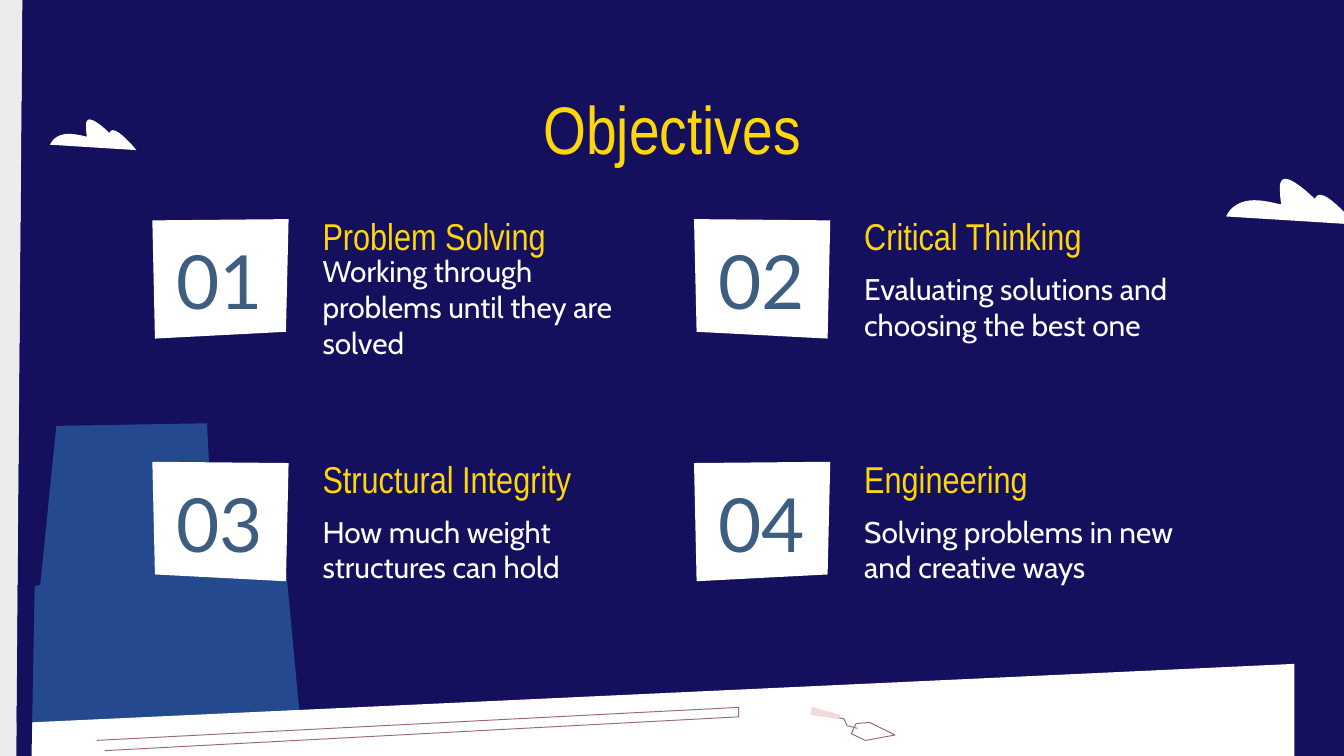
from dataclasses import dataclass

from pptx import Presentation
from pptx.dml.color import RGBColor
from pptx.enum.text import MSO_ANCHOR, MSO_AUTO_SIZE, PP_ALIGN
from pptx.util import Pt


@dataclass(frozen=True)
class Theme:
    navy: str = "14105E"
    blue: str = "25498F"
    white: str = "FFFFFF"
    paper: str = "ECECEC"
    yellow: str = "FED609"
    steel: str = "3E5E81"
    mauve: str = "9B6A70"
    pink: str = "F3D9DD"
    heading_font: str = "Arial Narrow"
    body_font: str = "Cabin"
    number_font: str = "Lato"
    title_size: int = 36
    number_size: int = 40
    heading_size: int = 20
    body_size: int = 16
    outline_width: float = 0.5


THEME = Theme()

OBJECTIVES = [
    ("01", "Problem Solving", "Working through problems until they are solved"),
    ("02", "Critical Thinking", "Evaluating solutions and choosing the best one"),
    ("03", "Structural Integrity", "How much weight structures can hold"),
    ("04", "Engineering", "Solving problems in new and creative ways"),
]
GRID_LEFT, GRID_TOP = 81.6, 117.4
COLUMN_PITCH, ROW_PITCH = 290.2, 130
CARD_WIDTH = 73
CARD_OUTLINE = [(0, 0.7), (CARD_WIDTH, 0), (71.6, 60.4), (1.4, 64)]

CLOUD_START = (31.7, 0)
CLOUD_CURVES = [
    [(30.2, 0), (28.8, 1.4), (28.8, 4.3)],
    [(28.8, 10.8), (29.5, 13), (29.5, 13.7)],
    [(28.1, 13.7), (21.6, 11.5), (15.1, 11.5)],
    [(9.4, 11.5), (2.9, 13.7), (0, 20.2)],
    [(0, 20.2), (69.1, 24.5), (69.1, 24.5)],
    [(69.1, 24.5), (56.2, 8.6), (50.4, 8.6)],
    [(49, 8.6), (48.2, 9.4), (47.5, 10.8)],
    [(47.5, 10.8), (36.7, 0), (31.7, 0)],
]


def add_outline(slide, points, closed):
    corners = [(Pt(x), Pt(y)) for x, y in points]
    builder = slide.shapes.build_freeform(*corners[0])
    builder.add_line_segments(corners[1:], close=closed)
    shape = builder.convert_to_shape()
    shape.shadow.inherit = False
    return shape


def add_polygon(slide, points, color):
    shape = add_outline(slide, points, True)
    shape.fill.solid()
    shape.fill.fore_color.rgb = RGBColor.from_string(color)
    shape.line.fill.background()


def add_line_drawing(slide, points, closed=False):
    shape = add_outline(slide, points, closed)
    shape.fill.background()
    shape.line.color.rgb = RGBColor.from_string(THEME.mauve)
    shape.line.width = Pt(THEME.outline_width)


def curve_points(start, curve, steps=10):
    controls = [start, *curve]
    for step in range(1, steps + 1):
        t = step / steps
        weights = [(1 - t) ** 3, 3 * t * (1 - t) ** 2, 3 * t**2 * (1 - t), t**3]
        yield tuple(
            sum(weight * point[axis] for weight, point in zip(weights, controls))
            for axis in (0, 1)
        )


def add_cloud(slide, left, top, scale):
    points = [CLOUD_START]
    for curve in CLOUD_CURVES:
        points.extend(curve_points(points[-1], curve))
    add_polygon(slide, [(left + scale * x, top + scale * y) for x, y in points], THEME.white)


def write_text(shape, text, font, size, color, alignment, anchor):
    frame = shape.text_frame
    frame.word_wrap = True
    frame.auto_size = MSO_AUTO_SIZE.NONE
    frame.vertical_anchor = anchor
    frame.margin_left = frame.margin_right = frame.margin_top = frame.margin_bottom = 0
    paragraph = frame.paragraphs[0]
    paragraph.alignment = alignment
    run = paragraph.add_run()
    run.text = text
    run.font.name = font
    run.font.size = Pt(size)
    run.font.color.rgb = RGBColor.from_string(color)


def add_label(slide, box, text, font, size, color, alignment=PP_ALIGN.LEFT):
    shape = slide.shapes.add_textbox(*map(Pt, box))
    write_text(shape, text, font, size, color, alignment, MSO_ANCHOR.MIDDLE)


def add_title(slide, text):
    title = slide.shapes.title
    title.left, title.top, title.width, title.height = map(Pt, (59, 46.8, 602, 33.8))
    write_text(title, text, THEME.heading_font, THEME.title_size, THEME.yellow,
               PP_ALIGN.CENTER, MSO_ANCHOR.TOP)


def add_scenery(slide):
    add_polygon(slide, [(161.3, 391), (153.4, 306.7), (114.5, 299.5), (110.9, 226.8),
                        (30.2, 228.2), (21.6, 313.2), (-10, 323.3), (-2.9, 396.7)], THEME.blue)
    add_polygon(slide, [(693.4, 355.7), (-5.8, 388.1), (-5.8, 425.5), (693.4, 425.5)],
                THEME.white)
    add_line_drawing(slide, [(51.8, 396.7), (395.8, 379), (395.8, 384.1), (56.2, 402.2)])
    add_line_drawing(slide, [(446.4, 383.8), (452.2, 385.2), (453.8, 388.8), (459.4, 390.2)])
    add_line_drawing(slide, [(465.8, 387), (479.5, 393.8), (463.7, 396.7), (456.1, 393.1),
                             (458.6, 387.7)], closed=True)
    add_polygon(slide, [(434.9, 378.7), (434.2, 383), (449.3, 385.2), (450, 383)], THEME.pink)
    add_polygon(slide, [(-25.2, -10.8), (-20.9, 432.7), (8.6, 424.8), (12.2, -10.8)],
                THEME.paper)
    add_polygon(slide, [(12.2, -10.8), (8.6, 424.8), (16.6, 421.9), (24.5, -10.8)], THEME.navy)
    add_cloud(slide, 26.8, 64, 0.67)
    add_cloud(slide, 656.9, 95.8, 1)


def add_objective(slide, left, top, mirrored, number, heading, body):
    outline = [(left + (CARD_WIDTH - x if mirrored else x), top + y) for x, y in CARD_OUTLINE]
    add_polygon(slide, outline, THEME.white)
    add_label(slide, (left + 1.9, top + 13.7, 68.4, 37.4), number,
              THEME.number_font, THEME.number_size, THEME.steel, PP_ALIGN.CENTER)
    text_left = left + 91.2
    add_label(slide, (text_left, top + 25.2, 175.7, 43.2), body,
              THEME.body_font, THEME.body_size, THEME.white)
    add_label(slide, (text_left, top - 4.3, 175.7, 26.6), heading,
              THEME.heading_font, THEME.heading_size, THEME.yellow)


def main():
    presentation = Presentation()
    presentation.slide_width, presentation.slide_height = Pt(720), Pt(405)
    slide = presentation.slides.add_slide(presentation.slide_layouts.get_by_name("Title Only"))
    slide.background.fill.solid()
    slide.background.fill.fore_color.rgb = RGBColor.from_string(THEME.navy)
    add_scenery(slide)
    add_title(slide, "Objectives")
    for index, objective in enumerate(OBJECTIVES):
        row, column = divmod(index, 2)
        add_objective(slide, GRID_LEFT + column * COLUMN_PITCH, GRID_TOP + row * ROW_PITCH,
                      (row + column) % 2 == 1, *objective)
    presentation.save("out.pptx")


if __name__ == "__main__":
    main()
